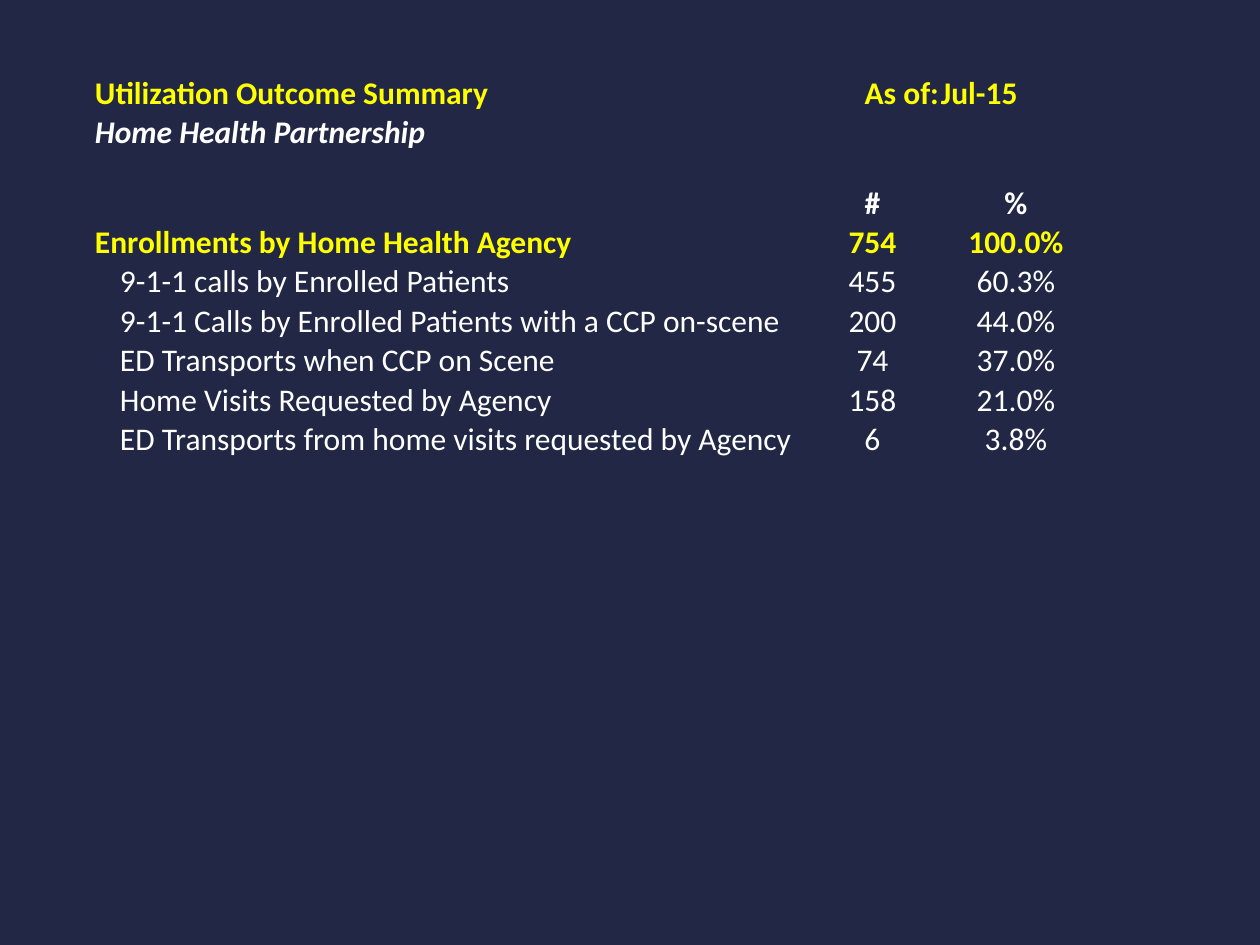
from lxml.etree import SubElement
from pptx import Presentation
from pptx.dml.color import RGBColor
from pptx.enum.text import MSO_ANCHOR, PP_ALIGN
from pptx.oxml.ns import qn
from pptx.util import Pt

NAVY = RGBColor(0x21, 0x27, 0x45)
YELLOW = RGBColor(0xFF, 0xFF, 0x00)
WHITE = RGBColor(0xFF, 0xFF, 0xFF)

TITLE = {"bold": True, "italic": False, "color": YELLOW}
PARTNERSHIP = {"bold": True, "italic": True, "color": WHITE}
HEADING = {"bold": True, "italic": False, "color": WHITE}
MEASURE = {"bold": False, "italic": False, "color": WHITE}

CENTERED = (PP_ALIGN.LEFT, PP_ALIGN.CENTER, PP_ALIGN.CENTER)
DATED = (PP_ALIGN.LEFT, PP_ALIGN.RIGHT, PP_ALIGN.LEFT)

SUMMARY = [
    (TITLE, DATED, ("Utilization Outcome Summary", "As of:", "Jul-15")),
    (PARTNERSHIP, CENTERED, ("Home Health Partnership", "", "")),
    (None, CENTERED, ("", "", "")),
    (HEADING, CENTERED, ("", "#", "%")),
    (TITLE, CENTERED, ("Enrollments by Home Health Agency", "754", "100.0%")),
] + [
    (MEASURE, CENTERED, measure)
    for measure in [
        ("9-1-1 calls by Enrolled Patients", "455", "60.3%"),
        ("9-1-1 Calls by Enrolled Patients with a CCP on-scene", "200", "44.0%"),
        ("ED Transports when CCP on Scene", "74", "37.0%"),
        ("Home Visits Requested by Agency", "158", "21.0%"),
        ("ED Transports from home visits requested by Agency", "6", "3.8%"),
    ]
]
COLUMN_WIDTHS = (711, 135, 152)
ROW_HEIGHT, SPACER_HEIGHT = 39, 31
TEXT_SIZE, SPACER_SIZE = 18, 14
INDENT = 26


def px(length):
    return round(length * 914400 / 126)


def clear_cell(cell, indent):
    """Remove fill and borders, and set the narrow margins."""
    margins = {"margin_left": indent, "margin_top": 1, "margin_right": 1, "margin_bottom": 0}
    for name, length in margins.items():
        setattr(cell, name, px(length))
    cell.vertical_anchor = MSO_ANCHOR.BOTTOM
    properties = cell._tc.get_or_add_tcPr()
    for edge in ("a:lnL", "a:lnR", "a:lnT", "a:lnB"):
        SubElement(SubElement(properties, qn(edge), w="0"), qn("a:noFill"))
    cell.fill.background()


def write_cell(cell, text, style, alignment):
    paragraph = cell.text_frame.paragraphs[0]
    paragraph.alignment = alignment
    if not text:
        size = TEXT_SIZE if style else SPACER_SIZE
        SubElement(paragraph._p, qn("a:endParaRPr"), sz=str(size * 100))
        return
    run = paragraph.add_run()
    run.text = text
    font_values = {"name": "Calibri", "size": Pt(TEXT_SIZE),
                   "bold": style["bold"], "italic": style["italic"]}
    for name, value in font_values.items():
        setattr(run.font, name, value)
    run.font.color.rgb = style["color"]


def add_summary(slide, left, top):
    heights = [ROW_HEIGHT if style else SPACER_HEIGHT for style, _, _ in SUMMARY]
    table = slide.shapes.add_table(
        len(SUMMARY), len(COLUMN_WIDTHS), px(left), px(top),
        px(sum(COLUMN_WIDTHS)), px(sum(heights))).table
    table.first_row = table.horz_banding = False
    for column, width in zip(table.columns, COLUMN_WIDTHS):
        column.width = px(width)
    for row, height, (style, alignments, texts) in zip(table.rows, heights, SUMMARY):
        row.height = px(height)
        for index, cell in enumerate(row.cells):
            clear_cell(cell, INDENT if style is MEASURE and index == 0 else 1)
            write_cell(cell, texts[index], style, alignments[index])


def main():
    presentation = Presentation()
    presentation.slide_width, presentation.slide_height = px(1260), px(945)
    slide = presentation.slides.add_slide(presentation.slide_layouts[6])
    slide.background.fill.solid()
    slide.background.fill.fore_color.rgb = NAVY
    add_summary(slide, left=94, top=73)
    presentation.save("out.pptx")


if __name__ == "__main__":
    main()
